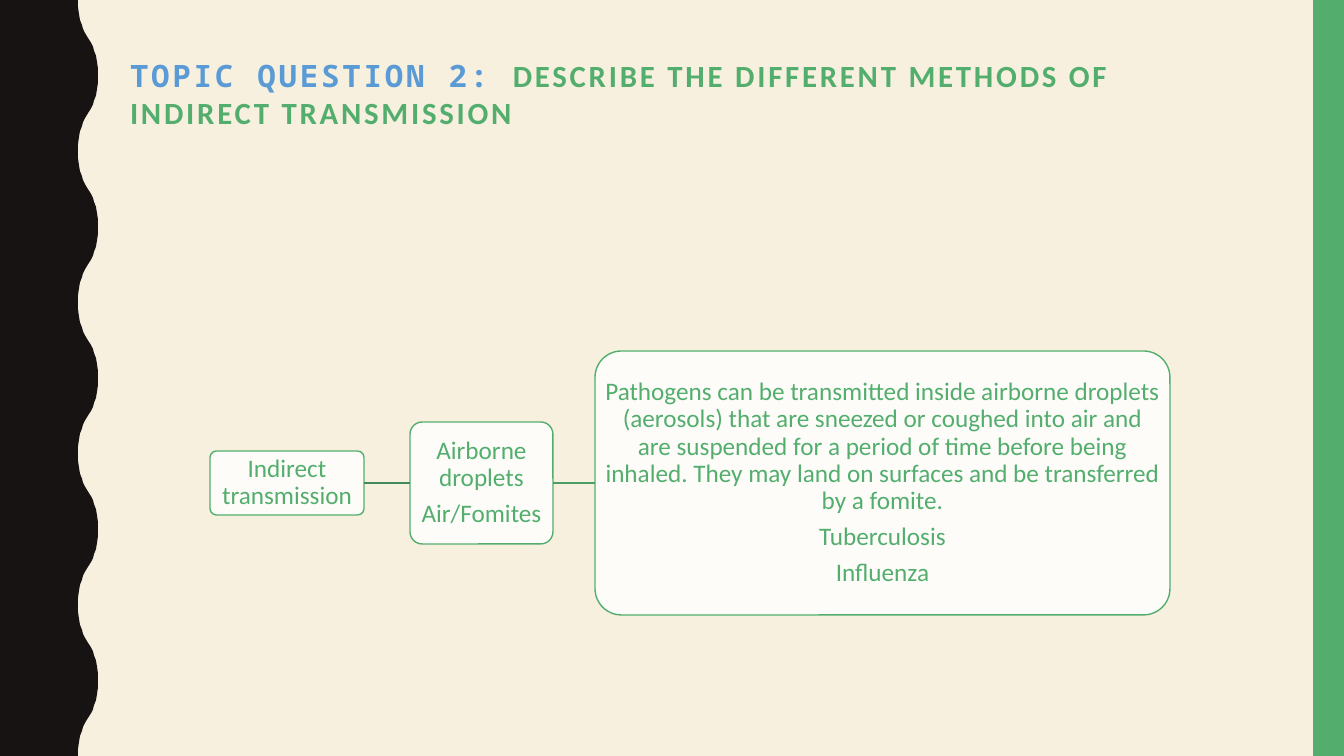
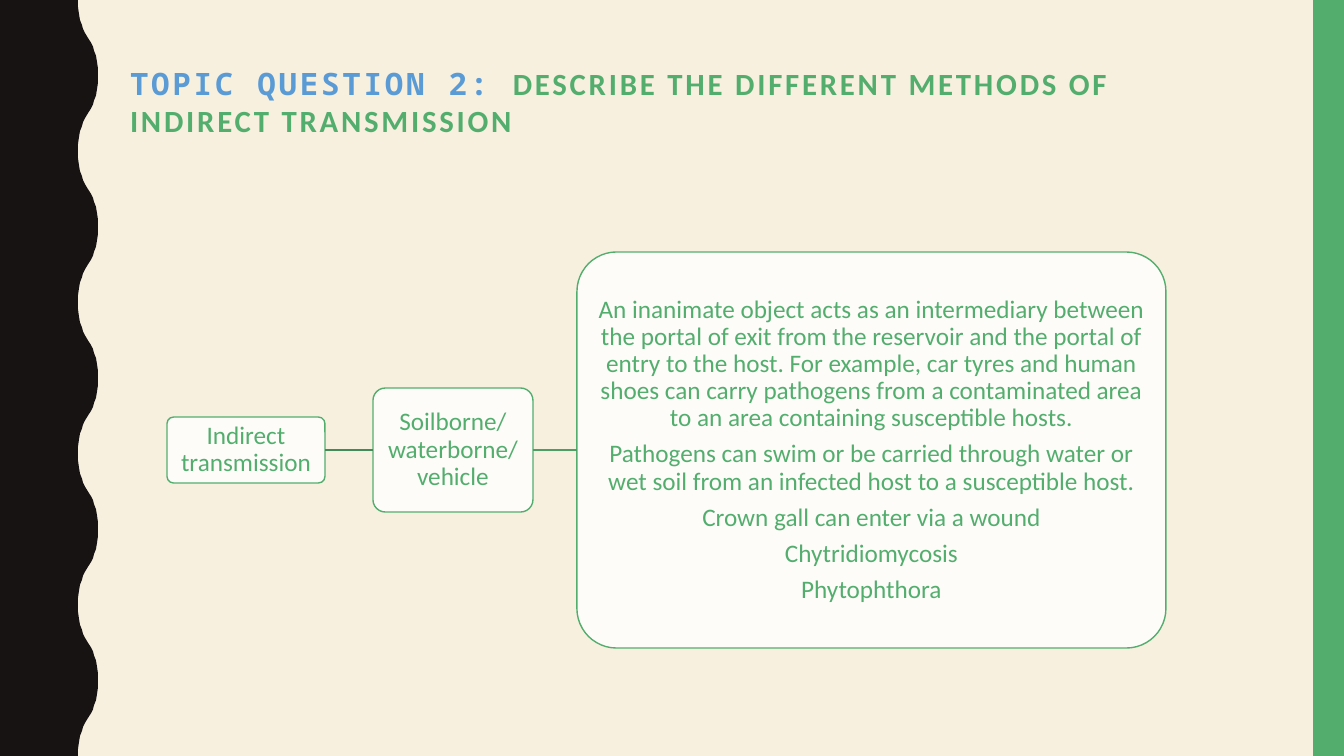
from dataclasses import dataclass

from lxml.etree import SubElement
from pptx import Presentation
from pptx.dml.color import RGBColor
from pptx.enum.shapes import MSO_CONNECTOR as Link, MSO_SHAPE as Shape
from pptx.enum.text import MSO_ANCHOR as Anchor, PP_ALIGN as Align
from pptx.oxml.ns import qn
from pptx.util import Pt

WIDTH, HEIGHT = 1344, 756
EMU_PER_PX = 12192000 / WIDTH
LEFT_SITE, RIGHT_SITE = 1, 3


@dataclass(frozen=True)
class Theme:
    paper: str = "F7F0DF"
    ink: str = "171312"
    green: str = "53AE6E"
    blue: str = "5B9BD5"
    card: str = "FDFCF9"
    links: tuple = ("428B58", "4B9E64")
    body_font: str = "Calibri"
    label_font: str = "Noto Sans Mono"
    title_size: float = 22
    body_size: float = 18
    paragraph_gap: float = 6.3
    outline: float = 1


THEME = Theme()

TITLE = (
    ("TOPIC QUESTION 2: ", THEME.label_font, THEME.blue),
    ("DESCRIBE THE DIFFERENT METHODS OF INDIRECT TRANSMISSION",
     THEME.body_font, THEME.green),
)

AIRBORNE = (
    (210, 154, 64, ["Indirect transmission"]),
    (410, 143, 122, ["Airborne droplets", "Air/Fomites"]),
    (595, 575, 264, [
        "Pathogens can be transmitted inside airborne droplets (aerosols) "
        "that are sneezed or coughed into air and are suspended for a period "
        "of time before being inhaled. They may land on surfaces and be "
        "transferred by a fomite.",
        "Tuberculosis",
        "Influenza",
    ]),
)

VEHICLE = (
    (167, 158, 66, ["Indirect transmission"]),
    (373, 160, 124, ["Soilborne/ waterborne/ vehicle"]),
    (577, 589, 396, [
        "An inanimate object acts as an intermediary between the portal of "
        "exit from the reservoir and the portal of entry to the host. For "
        "example, car tyres and human shoes can carry pathogens from a "
        "contaminated area to an area containing susceptible hosts.",
        "Pathogens can swim or be carried through water or wet soil from an "
        "infected host to a susceptible host.",
        "Crown gall can enter via a wound",
        "Chytridiomycosis",
        "Phytophthora",
    ]),
)


def px(length):
    return round(length * EMU_PER_PX)


def colour(code):
    return RGBColor.from_string(code)


def paint(shape, fill, line=None):
    shape.shadow.inherit = False
    shape.fill.solid()
    shape.fill.fore_color.rgb = colour(fill)
    if line:
        shape.line.color.rgb = colour(line)
        shape.line.width = Pt(THEME.outline)
    else:
        shape.line.fill.background()


def prepare_frame(frame, anchor, inset):
    frame.word_wrap = True
    frame.vertical_anchor = anchor
    frame.margin_left = frame.margin_right = px(inset)
    frame.margin_top = frame.margin_bottom = px(inset)


def add_run(paragraph, text, font, size, code, bold=False):
    run = paragraph.add_run()
    run.text = text
    run.font.name = font
    run.font.size = Pt(size)
    run.font.bold = bold
    run.font.color.rgb = colour(code)
    return run


def wave_outline():
    trough, depth, period = 78, 20, HEIGHT / 5
    quarter = [(0, 0), (7, 0), (14, 1), (20, 2), (25, 4), (29, 5), (33, 7), (38, 10)]
    rising = quarter + [(period / 2 - y, depth - x) for y, x in quarter[-2::-1]]
    falling = [(period - y, x) for y, x in rising[-2::-1]]
    edge = [(trough + x, wave * period + y)
            for wave in range(5) for y, x in rising + falling]
    return [(px(x), px(y)) for x, y in edge + [(0, HEIGHT)]]


def add_side_bands(slide):
    builder = slide.shapes.build_freeform(0, 0)
    builder.add_line_segments(wave_outline(), close=True)
    paint(builder.convert_to_shape(), THEME.ink)
    right_band = slide.shapes.add_shape(
        Shape.RECTANGLE, px(1313), 0, px(WIDTH - 1313), px(HEIGHT))
    paint(right_band, THEME.green)


def add_title(slide, top):
    title = slide.shapes.add_textbox(px(130), px(top), px(1122), px(80))
    prepare_frame(title.text_frame, Anchor.TOP, 0)
    paragraph = title.text_frame.paragraphs[0]
    for text, font, code in TITLE:
        run = add_run(paragraph, text, font, THEME.title_size, code, bold=True)
        run.font._element.set("spc", "200")


def add_node(slide, left, middle, width, height, lines):
    node = slide.shapes.add_shape(
        Shape.ROUNDED_RECTANGLE, px(left), px(middle - height / 2), px(width), px(height))
    node.adjustments[0] = 0.1
    paint(node, THEME.card, THEME.green)
    frame = node.text_frame
    prepare_frame(frame, Anchor.MIDDLE, 1)
    for index, line in enumerate(lines):
        paragraph = frame.add_paragraph() if index else frame.paragraphs[0]
        paragraph.alignment = Align.CENTER
        paragraph.line_spacing = 0.9
        paragraph.space_after = Pt(THEME.paragraph_gap)
        add_run(paragraph, line, THEME.body_font, THEME.body_size, THEME.green)
    return node


def add_link(slide, source, target, code):
    link = slide.shapes.add_connector(Link.STRAIGHT, 0, 0, 0, 0)
    link.begin_connect(source, RIGHT_SITE)
    link.end_connect(target, LEFT_SITE)
    link.line.color.rgb = colour(code)
    link.line.width = Pt(THEME.outline)
    SubElement(link._element.spPr, qn("a:effectLst"))


def add_transmission_slide(deck, title_top, middle, branch):
    slide = deck.slides.add_slide(deck.slide_layouts[6])
    add_side_bands(slide)
    add_title(slide, title_top)
    nodes = [add_node(slide, left, middle, width, height, lines)
             for left, width, height, lines in branch]
    for source, target, code in zip(nodes, nodes[1:], THEME.links):
        add_link(slide, source, target, code)


def main():
    deck = Presentation()
    deck.slide_width, deck.slide_height = px(WIDTH), px(HEIGHT)
    backdrop = deck.slide_master.background.fill
    backdrop.solid()
    backdrop.fore_color.rgb = colour(THEME.paper)
    add_transmission_slide(deck, 57, 483, AIRBORNE)
    add_transmission_slide(deck, 65, 450, VEHICLE)
    deck.save("out.pptx")


if __name__ == "__main__":
    main()
